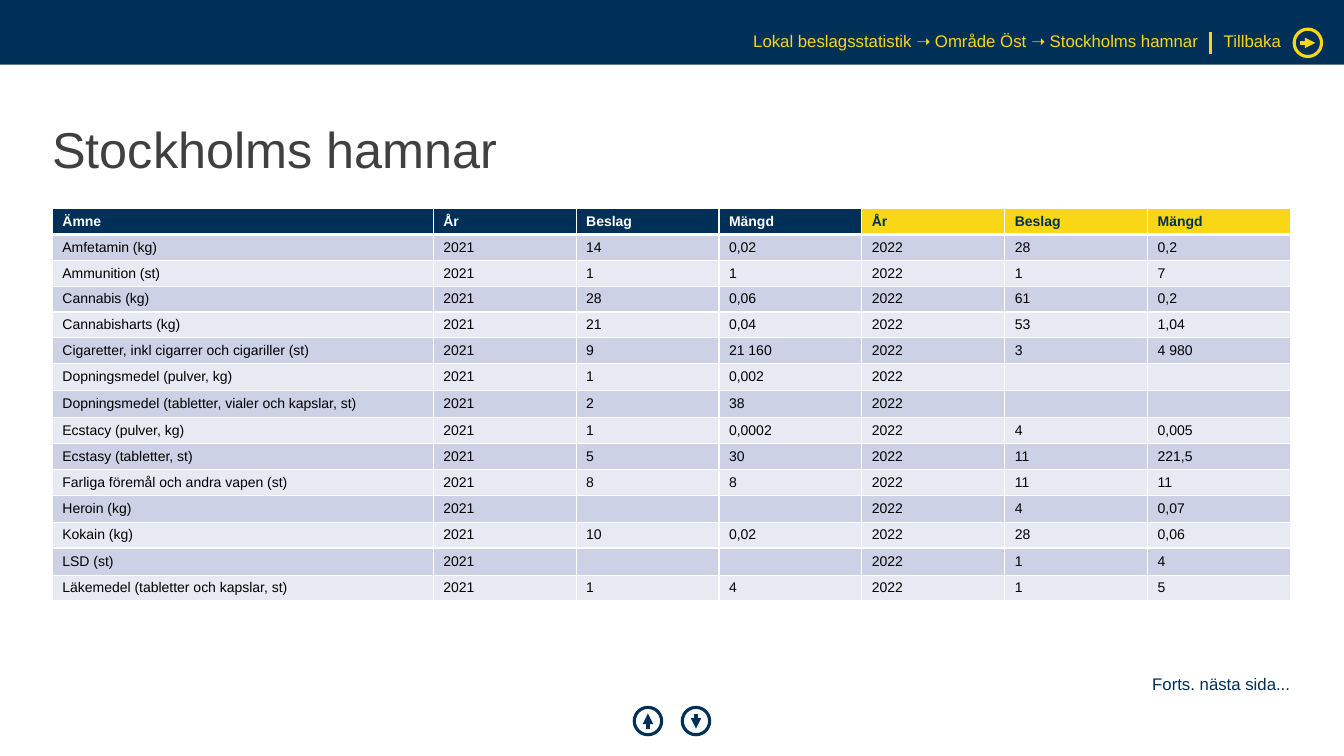
from dataclasses import dataclass

from lxml import etree
from pptx import Presentation
from pptx import util as u
from pptx.dml.color import RGBColor
from pptx.enum import shapes, text
from pptx.oxml import ns


@dataclass(frozen=True)
class Theme:
    """Colours, font and type sizes of the page."""
    navy: str = "003057"
    yellow: str = "F9D616"
    grey: str = "404040"
    black: str = "000000"
    white: str = "FFFFFF"
    bands: tuple = ("CCD1E6", "E7EAF3")
    font: str = "Arial"
    title: float = 36
    label: float = 12
    cell: float = 10


THEME = Theme()
PAGE_WIDTH, PAGE_HEIGHT = 33.87, 19.05
LEFT, CONTENT_WIDTH = 1.32, 31.2
COLUMNS = [9.6] + [3.6] * 6
ROW_HEIGHT = 0.65
HEADINGS = ["Ämne"] + ["År", "Beslag", "Mängd"] * 2
SEIZURES = [
    ("Amfetamin (kg)", "14", "0,02", "28", "0,2"),
    ("Ammunition (st)", "1", "1", "1", "7"),
    ("Cannabis (kg)", "28", "0,06", "61", "0,2"),
    ("Cannabisharts (kg)", "21", "0,04", "53", "1,04"),
    ("Cigaretter, inkl cigarrer och cigariller (st)", "9", "21 160", "3", "4 980"),
    ("Dopningsmedel (pulver, kg)", "1", "0,002", "", ""),
    ("Dopningsmedel (tabletter, vialer och kapslar, st)", "2", "38", "", ""),
    ("Ecstacy (pulver, kg)", "1", "0,0002", "4", "0,005"),
    ("Ecstasy (tabletter, st)", "5", "30", "11", "221,5"),
    ("Farliga föremål och andra vapen (st)", "8", "8", "11", "11"),
    ("Heroin (kg)", "", "", "4", "0,07"),
    ("Kokain (kg)", "10", "0,02", "28", "0,06"),
    ("LSD (st)", "", "", "1", "4"),
    ("Läkemedel (tabletter och kapslar, st)", "1", "4", "1", "5"),
]


def rgb(colour):
    """Turn a hex string into a colour."""
    return RGBColor.from_string(colour)


def add_span(para, words, size, colour, bold=False):
    """Add one formatted run to a paragraph."""
    span = para.add_run()
    span.text = words
    span.font.name = THEME.font
    span.font.size = u.Pt(size)
    span.font.bold = bold
    span.font.color.rgb = rgb(colour)


def fill_frame(frame, words, size, colour, align, anchor):
    """Write one line into a frame without insets."""
    frame.word_wrap = True
    frame.auto_size = text.MSO_AUTO_SIZE.NONE
    frame.vertical_anchor = anchor
    frame.margin_left = frame.margin_right = frame.margin_top = frame.margin_bottom = 0
    para = frame.paragraphs[0]
    para.alignment = align
    para.line_spacing = 0.9
    add_span(para, words, size, colour)


def add_title(page, words):
    """Place and format the title placeholder."""
    title = page.shapes.title
    title.left, title.top = u.Cm(LEFT), u.Cm(2)
    title.width, title.height = u.Cm(CONTENT_WIDTH), u.Cm(3.68)
    fill_frame(title.text_frame, words, THEME.title, THEME.grey,
               text.PP_ALIGN.LEFT, text.MSO_ANCHOR.MIDDLE)


def add_label(page, words, left, top, width, colour, align=text.PP_ALIGN.RIGHT):
    """Add a small one-line label."""
    box = page.shapes.add_textbox(u.Cm(left), u.Cm(top), u.Cm(width), u.Cm(0.48))
    fill_frame(box.text_frame, words, THEME.label, colour, align, text.MSO_ANCHOR.TOP)


def add_band(page):
    """Add the dark band along the top edge."""
    band = page.shapes.add_shape(shapes.MSO_SHAPE.RECTANGLE, 0, 0,
                                 u.Cm(PAGE_WIDTH), u.Cm(1.63))
    band.shadow.inherit = False
    band.fill.solid()
    band.fill.fore_color.rgb = rgb(THEME.navy)
    band.line.fill.background()


def add_line(page, start, end, colour, weight, arrow=False):
    """Add a straight line, with an arrowhead at its end if asked."""
    line = page.shapes.add_connector(shapes.MSO_CONNECTOR.STRAIGHT,
                                     *(u.Cm(value) for value in (*start, *end)))
    line.line.color.rgb = rgb(colour)
    line.line.width = u.Pt(weight)
    if arrow:
        etree.SubElement(line.line._get_or_add_ln(), ns.qn("a:tailEnd"), type="triangle")
    etree.SubElement(line._element.spPr, ns.qn("a:effectLst"))


def add_arrow_button(page, x, y, direction, colour):
    """Add a ring centred on a point with an arrow inside."""
    diameter, reach = 0.69, 0.19
    dx, dy = (reach * step for step in direction)
    add_line(page, (x - dx, y - dy), (x + dx, y + dy), colour, 2.5, arrow=True)
    ring = page.shapes.add_shape(shapes.MSO_SHAPE.OVAL, u.Cm(x - diameter / 2),
                                 u.Cm(y - diameter / 2), u.Cm(diameter), u.Cm(diameter))
    ring.shadow.inherit = False
    ring.fill.background()
    ring.line.color.rgb = rgb(colour)
    ring.line.width = u.Pt(2.25)


def add_borders(cell, top, bottom):
    """Draw white borders around a cell."""
    props = cell._tc.get_or_add_tcPr()
    for side, weight in (("L", 1), ("R", 1), ("T", top), ("B", bottom)):
        edge = etree.SubElement(props, ns.qn(f"a:ln{side}"), w=str(u.Pt(weight)))
        fill = etree.SubElement(edge, ns.qn("a:solidFill"))
        etree.SubElement(fill, ns.qn("a:srgbClr"), val=THEME.white)


def cell_style(row, column):
    """Give the fill and text colour of a table cell."""
    if row:
        return THEME.bands[(row - 1) % 2], THEME.black
    return (THEME.navy, THEME.white) if column < 4 else (THEME.yellow, THEME.navy)


def fill_cell(cell, words, row, column):
    """Write and format one table cell."""
    add_borders(cell, top=3 if row == 1 else 1, bottom=1 if row else 3)
    fill, colour = cell_style(row, column)
    cell.fill.solid()
    cell.fill.fore_color.rgb = rgb(fill)
    cell.vertical_anchor = text.MSO_ANCHOR.MIDDLE
    para = cell.text_frame.paragraphs[0]
    if words:
        add_span(para, words, THEME.cell, colour, bold=row == 0)
    else:
        etree.SubElement(para._p, ns.qn("a:endParaRPr"), sz=str(THEME.cell * 100))


def add_seizure_table(page):
    """Add the table that compares the two years."""
    rows = [HEADINGS] + [(name, "2021", *values[:2], "2022", *values[2:])
                         for name, *values in SEIZURES]
    table = page.shapes.add_table(len(rows), len(COLUMNS), u.Cm(LEFT), u.Cm(5.26),
                                  u.Cm(CONTENT_WIDTH), u.Cm(ROW_HEIGHT * len(rows))).table
    for column, width in zip(table.columns, COLUMNS):
        column.width = u.Cm(width)
    for r, values in enumerate(rows):
        table.rows[r].height = u.Cm(ROW_HEIGHT)
        for c, words in enumerate(values):
            fill_cell(table.cell(r, c), words, r, c)


def main():
    """Build the page and save the deck."""
    deck = Presentation()
    deck.slide_width, deck.slide_height = u.Cm(PAGE_WIDTH), u.Cm(PAGE_HEIGHT)
    page = deck.slides.add_slide(deck.slide_layouts[5])
    add_band(page)
    add_title(page, "Stockholms hamnar")
    add_arrow_button(page, 32.96, 1.08, (1, 0), THEME.yellow)
    add_label(page, "Tillbaka", 30.84, 0.84, 1.6, THEME.yellow, text.PP_ALIGN.LEFT)
    add_line(page, (30.5, 0.81), (30.5, 1.37), THEME.yellow, 2.25)
    add_seizure_table(page)
    add_arrow_button(page, 17.54, 18.17, (0, 1), THEME.navy)
    add_arrow_button(page, 16.33, 18.17, (0, -1), THEME.navy)
    add_label(page, "Lokal beslagsstatistik ➝ Område Öst ➝ Stockholms hamnar",
              13.97, 0.84, 16.24, THEME.yellow)
    add_label(page, "Forts. nästa sida...", 16.26, 17.04, 16.26, THEME.navy)
    deck.save("out.pptx")


if __name__ == "__main__":
    main()
